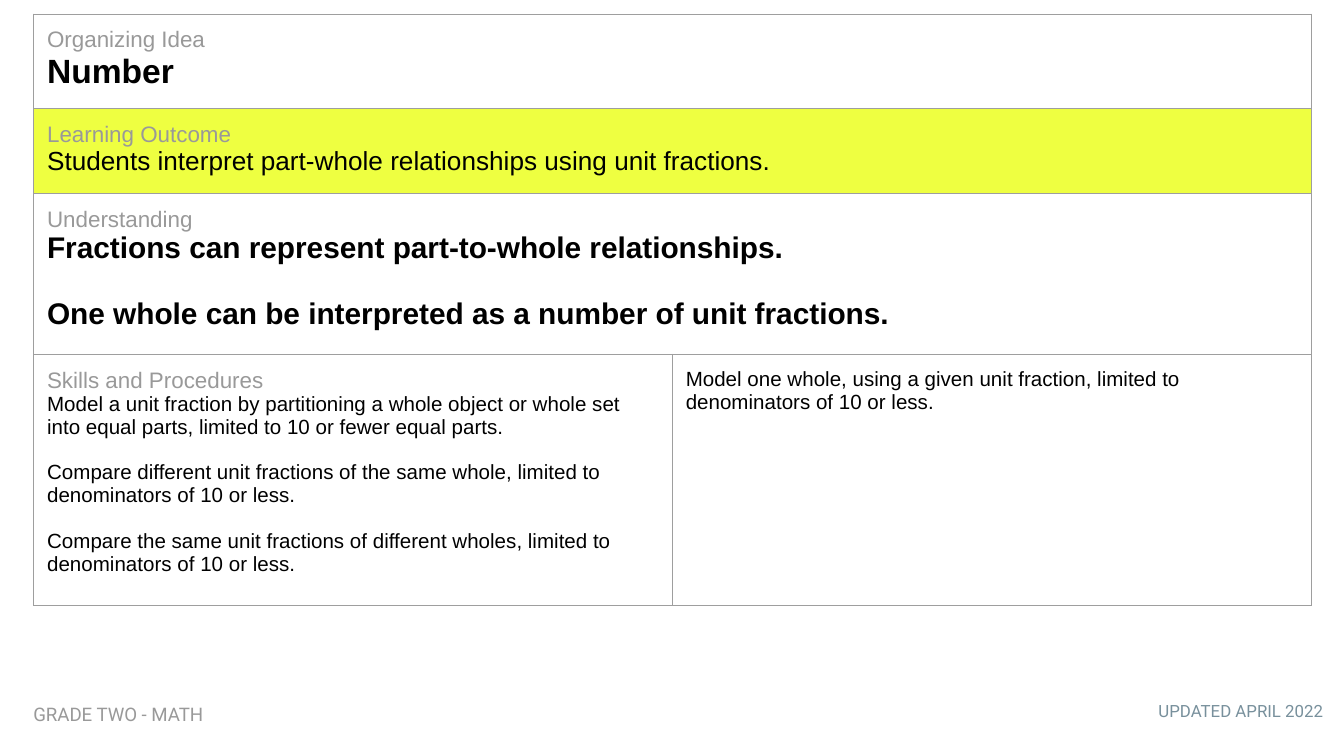
from dataclasses import dataclass

from lxml.etree import SubElement
from pptx import Presentation
from pptx.dml.color import RGBColor
from pptx.enum.text import PP_ALIGN
from pptx.oxml.ns import qn
from pptx.util import Cm, Pt


@dataclass(frozen=True)
class Theme:
    body_font: str = "Arial"
    footer_font: str = "Roboto"
    text: str = "000000"
    label: str = "999999"
    date: str = "78909C"
    border: str = "9E9E9E"
    highlight: str = "EEFF41"
    label_size: int = 12
    idea_size: int = 18
    outcome_size: int = 14
    understanding_size: int = 16
    skill_size: int = 11
    grade_size: int = 10
    date_size: int = 9


theme = Theme()
MARGIN = Cm(0.25)


def write(p, text, size, color, font=theme.body_font, bold=False):
    p.text = text
    p.font.name = font
    p.font.size = Pt(size)
    p.font.bold = bold
    p.font.color.rgb = RGBColor.from_string(color)


def add_borders(cell):
    tc_pr = cell._tc.get_or_add_tcPr()
    for side in ("lnL", "lnR", "lnT", "lnB"):
        ln = SubElement(tc_pr, qn(f"a:{side}"), w=str(Pt(0.75)))
        SubElement(SubElement(ln, qn("a:solidFill")), qn("a:srgbClr"), val=theme.border)


prs = Presentation()
prs.slide_width, prs.slide_height = Cm(25.4), Cm(14.29)
s = prs.slides.add_slide(prs.slide_layouts[6])

# Curriculum table: three full-width rows above two skill columns
row_heights = [Cm(1.78), Cm(1.61), Cm(3.04), Cm(4.75)]
frame = s.shapes.add_table(4, 2, Cm(0.64), Cm(0.27), Cm(24.13), sum(row_heights))
table = frame.table
table.first_row = table.horz_banding = False
for col in table.columns:
    col.width = Cm(12.07)
for row, height in zip(table.rows, row_heights):
    row.height = height
for cell in table.iter_cells():
    add_borders(cell)
    cell.fill.background()
for i in range(3):
    table.cell(i, 0).merge(table.cell(i, 1))
for i in range(2):
    outcome = table.cell(1, i)
    outcome.fill.solid()
    outcome.fill.fore_color.rgb = RGBColor.from_string(theme.highlight)

# row, column, label, size, bold, gap between entries in points, entries
contents = [
    (0, 0, "Organizing Idea", theme.idea_size, True, 0, ["Number"]),
    (1, 0, "Learning Outcome", theme.outcome_size, False, 0,
     ["Students interpret part-whole relationships using unit fractions."]),
    (2, 0, "Understanding", theme.understanding_size, True, 17.5,
     ["Fractions can represent part-to-whole relationships.",
      "One whole can be interpreted as a number of unit fractions."]),
    (3, 0, "Skills and Procedures", theme.skill_size, False, 12.2,
     ["Model a unit fraction by partitioning a whole object or whole set into equal parts, "
      "limited to 10 or fewer equal parts.",
      "Compare different unit fractions of the same whole, limited to denominators of 10 or less.",
      "Compare the same unit fractions of different wholes, limited to denominators of 10 or less."]),
    (3, 1, None, theme.skill_size, False, 0,
     ["Model one whole, using a given unit fraction, limited to denominators of 10 or less."]),
]
for row, col, label, size, bold, gap, entries in contents:
    cell = table.cell(row, col)
    cell.margin_left = cell.margin_right = cell.margin_top = cell.margin_bottom = MARGIN
    tf = cell.text_frame
    p = tf.paragraphs[0]
    if label:
        write(p, label, theme.label_size, theme.label)
        p = tf.add_paragraph()
    for i, entry in enumerate(entries):
        if i:
            p = tf.add_paragraph()
            p.space_before = Pt(gap)
        write(p, entry, size, theme.text, bold=bold)

# Footer
footers = [
    ("GRADE TWO - MATH", 0.38, 13.08, 7.65, 0.94, theme.grade_size, theme.label, PP_ALIGN.LEFT),
    ("UPDATED APRIL 2022", 18.39, 13.06, 6.86, 0.89, theme.date_size, theme.date, PP_ALIGN.RIGHT),
]
for text, left, top, width, height, size, color, align in footers:
    tf = s.shapes.add_textbox(Cm(left), Cm(top), Cm(width), Cm(height)).text_frame
    tf.word_wrap = True
    tf.margin_left = tf.margin_right = tf.margin_top = tf.margin_bottom = MARGIN
    p = tf.paragraphs[0]
    p.alignment = align
    write(p, text, size, color, font=theme.footer_font)

prs.save("out.pptx")
